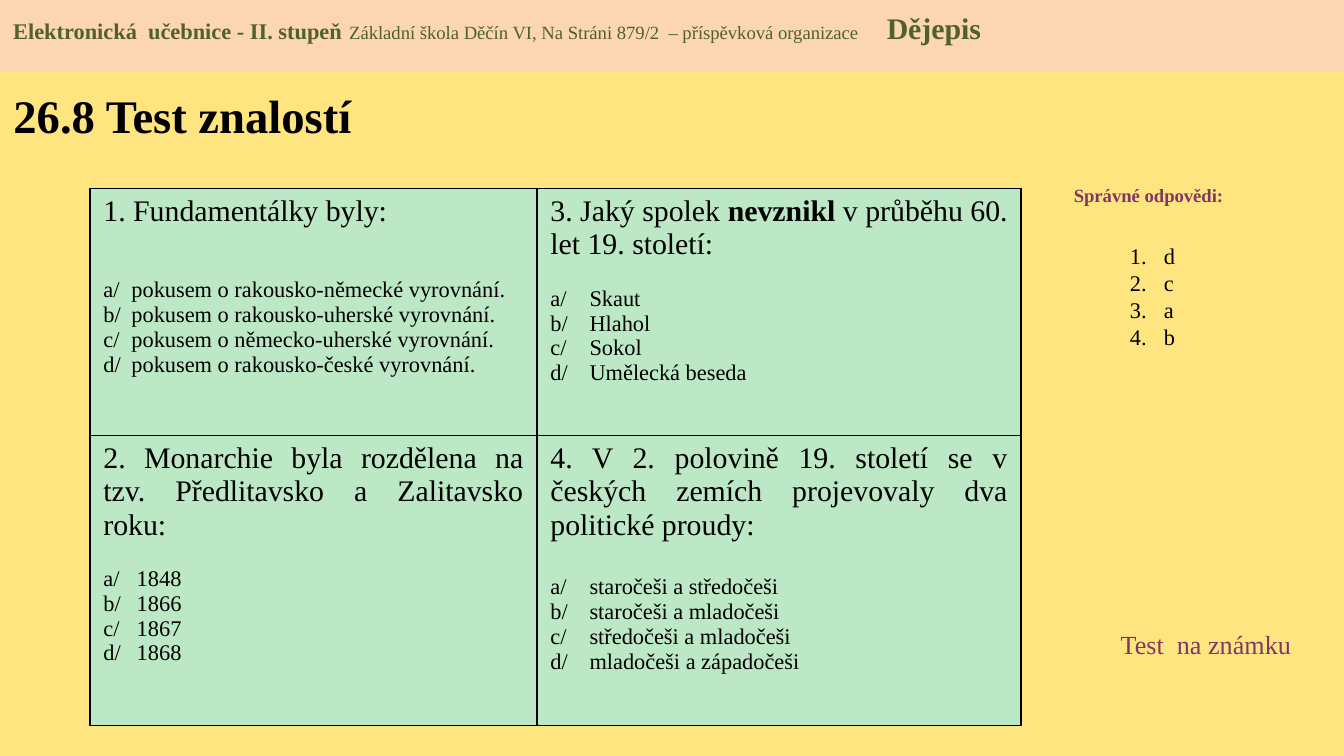
from lxml import etree
from pptx import Presentation
from pptx.dml.color import RGBColor
from pptx.enum import shapes, text
from pptx.oxml import ns
from pptx.util import Cm, Pt

FONT = "Times New Roman"
BLACK = RGBColor(0, 0, 0)
SAND = RGBColor(0xFF, 0xE5, 0x80)
PEACH = RGBColor(0xFC, 0xD5, 0xB5)
MINT = RGBColor(0xBD, 0xE8, 0xC5)
OLIVE = RGBColor(0x4F, 0x62, 0x28)
PLUM = RGBColor(0x81, 0x37, 0x63)
LEFT, MID, JUST = (text.PP_ALIGN.LEFT, text.PP_ALIGN.CENTER,
                   text.PP_ALIGN.JUSTIFY)

# Each question: runs (words, bold), gap below in points, hang in cm, answers
QUIZ = [
    [([("1. Fundamentálky byly:", False)], 26.6, 0.53,
      ["pokusem o rakousko-německé vyrovnání.",
       "pokusem o rakousko-uherské vyrovnání.",
       "pokusem o německo-uherské vyrovnání.",
       "pokusem o rakousko-české vyrovnání."]),
     ([("3. Jaký spolek ", False), ("nevznikl", True),
       (" v průběhu 60. let 19. století:", False)], 13.3, 0.74,
      ["Skaut", "Hlahol", "Sokol", "Umělecká beseda"])],
    [([("2. Monarchie byla rozdělena na tzv. Předlitavsko a Zalitavsko roku:",
        False)], 13.3, 0.63, ["1848", "1866", "1867", "1868"]),
     ([("4. V 2. polovině 19. století se v českých zemích projevovaly "
        "dva politické proudy:", False)], 17.7, 0.74,
      ["staročeši a středočeši", "staročeši a mladočeši",
       "středočeši a mladočeši", "mladočeši a západočeši"])],
]


def say(para, words, size=12, ink=BLACK, bold=False, align=LEFT, hang=0):
    """Add a run to a paragraph and set the paragraph's layout."""
    para.alignment = align
    props = para._p.get_or_add_pPr()
    props.set("marL", str(Cm(hang)))
    props.set("indent", str(-Cm(hang)))
    run = para.add_run()
    run.text = words
    font = run.font
    font.name, font.size, font.bold = FONT, Pt(size), bold
    font.color.rgb = ink


def node(root, tag, **attrs):
    return etree.SubElement(root, ns.qn("a:" + tag), attrs)


def fit(shape, box):
    shape.left, shape.top, shape.width, shape.height = map(Cm, box)


def banner(slide, box):
    bar = slide.shapes.add_shape(shapes.MSO_SHAPE.RECTANGLE, *map(Cm, box))
    bar.shadow.inherit = False
    bar.fill.solid()
    bar.fill.fore_color.rgb = PEACH
    bar.line.fill.background()
    frame = bar.text_frame
    frame.vertical_anchor = text.MSO_ANCHOR.TOP
    frame.margin_top = Cm(0.18)
    para = frame.paragraphs[0]
    tabs = node(para._p.get_or_add_pPr(), "tabLst")
    node(tabs, "tab", pos=str(Cm(8.03)), algn="l")
    node(tabs, "tab", pos=str(Cm(box[2] - 0.72)), algn="r")
    say(para, "Elektronická  učebnice - II. stupeň", ink=OLIVE, bold=True)
    say(para, "\tZákladní škola Děčín VI, Na Stráni 879/2  – příspěvková "
        "organizace", size=10, ink=OLIVE)
    say(para, "\tDějepis", size=16, ink=OLIVE, bold=True)


def title(slide, box):
    head = slide.shapes.title
    fit(head, box)
    frame = head.text_frame
    frame.vertical_anchor = text.MSO_ANCHOR.MIDDLE
    say(frame.paragraphs[0], "26.8 Test znalostí", size=25, bold=True)


def edge(cell):
    """Draw a thin black line on all four sides of a cell."""
    props = cell._tc.get_or_add_tcPr()
    for spot, side in enumerate("LRTB"):
        line = etree.Element(ns.qn("a:ln" + side), w=str(Pt(1)))
        node(node(line, "solidFill"), "srgbClr", val=str(BLACK))
        props.insert(spot, line)


def ask(cell, runs, gap, hang, picks):
    """Fill a cell with one question and its lettered answers."""
    cell.fill.solid()
    cell.fill.fore_color.rgb = MINT
    edge(cell)
    frame = cell.text_frame
    para = frame.paragraphs[0]
    para.space_after = Pt(gap)
    for words, bold in runs:
        say(para, words, size=16, bold=bold, align=JUST)
    for mark, pick in zip("abcd", picks):
        say(frame.add_paragraph(), f"{mark}/\t{pick}", hang=hang)


def quiz(slide, box):
    table = slide.shapes.add_table(2, 2, *map(Cm, box)).table
    table.first_row = table.horz_banding = False
    wide, high = box[2:]
    for col, part in zip(table.columns, (0.48, 0.52)):
        col.width = Cm(wide * part)
    for row, part in zip(table.rows, (0.46, 0.54)):
        row.height = Cm(high * part)
    for r, line in enumerate(QUIZ):
        for c, item in enumerate(line):
            ask(table.cell(r, c), *item)


def label(slide, box, words, **style):
    frame = slide.shapes.add_textbox(*map(Cm, box)).text_frame
    frame.word_wrap = True
    say(frame.paragraphs[0], words, ink=PLUM, **style)


def key(slide, box):
    """Place the numbered list of right answers."""
    body = slide.placeholders[1]
    fit(body, box)
    frame = body.text_frame
    frame.auto_size = text.MSO_AUTO_SIZE.NONE
    for spot, pick in enumerate("dcab"):
        para = frame.add_paragraph() if spot else frame.paragraphs[0]
        props = para._p.get_or_add_pPr()
        node(props, "buFont", typeface=FONT)
        node(props, "buAutoNum", type="arabicPeriod")
        para.space_before = Pt(0)
        para.line_spacing = Pt(14.5)
        say(para, pick, hang=0.64)


def main():
    deck = Presentation()
    deck.slide_width, deck.slide_height = Cm(25.4), Cm(14.29)
    slide = deck.slides.add_slide(deck.slide_layouts[1])
    back = slide.background.fill
    back.solid()
    back.fore_color.rgb = SAND
    title(slide, (0, 1.35, 9.2, 1.65))
    label(slide, (19.71, 3.35, 3.99, 0.69), "Správné odpovědi:",
          size=10, bold=True, align=MID)
    quiz(slide, (1.7, 3.56, 17.6, 10.15))
    key(slide, (21.1, 4.45, 1.4, 2.8))
    label(slide, (20.93, 11.76, 3.99, 0.86), "Test  na známku", size=14)
    banner(slide, (0, 0, 25.4, 1.36))
    deck.save("out.pptx")


if __name__ == "__main__":
    main()
